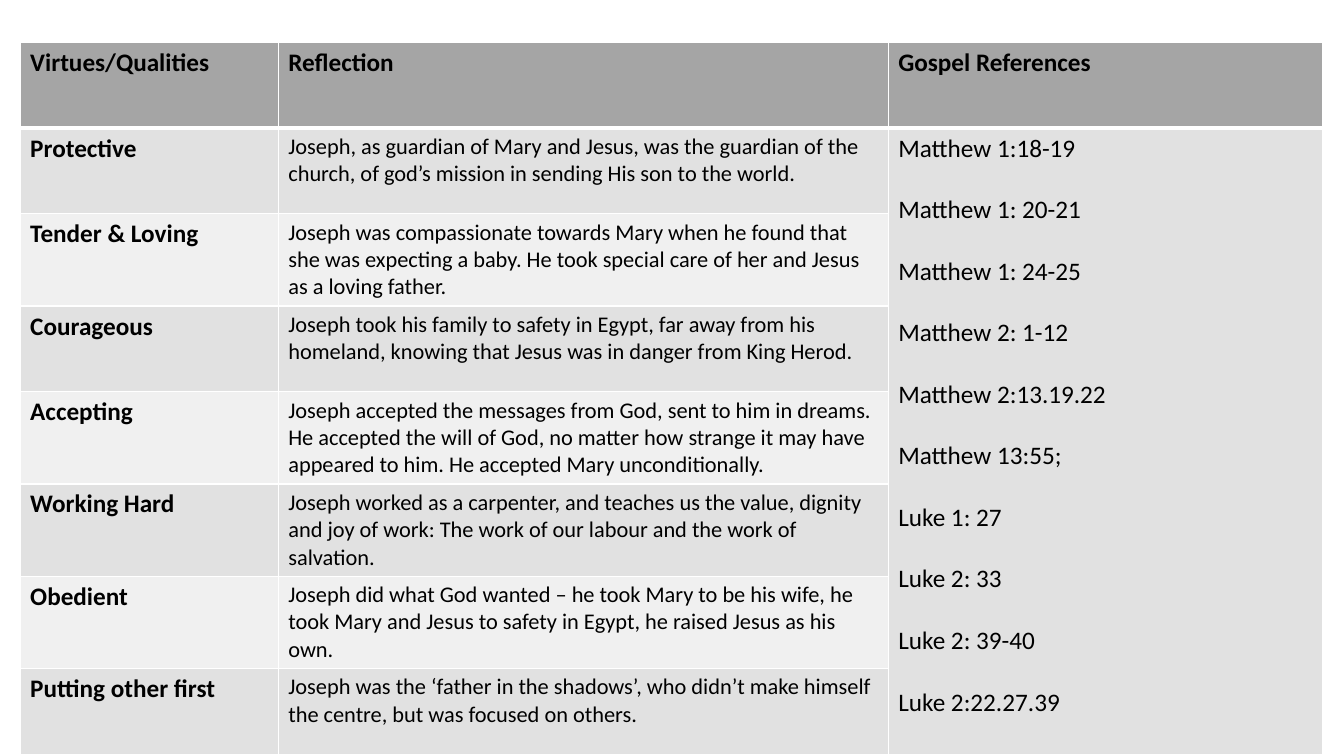
from dataclasses import dataclass

from lxml import etree
from pptx import Presentation
from pptx.dml.color import RGBColor
from pptx.oxml import ns
from pptx.util import Inches, Pt


@dataclass(frozen=True)
class Theme:
    font: str = "Calibri"
    ink: str = "000000"
    rule: str = "FFFFFF"
    header: str = "A5A5A5"
    bands: tuple = ("E1E1E1", "F0F0F0")
    label_size: int = 18
    body_size: int = 16
    reference_gap: int = 22
    thin: int = 1
    thick: int = 3


THEME = Theme()
COLUMN_WIDTHS = (2.56, 6.05, 4.31)
ROW_HEIGHT = 0.85
HEADINGS = ("Virtues/Qualities", "Reflection", "Gospel References")
VIRTUES = (
    ("Protective",
     "Joseph, as guardian of Mary and Jesus, was the guardian of the church, "
     "of god’s mission in sending His son to the world."),
    ("Tender & Loving",
     "Joseph was compassionate towards Mary when he found that she was expecting a baby. "
     "He took special care of her and Jesus as a loving father."),
    ("Courageous",
     "Joseph took his family to safety in Egypt, far away from his homeland, "
     "knowing that Jesus was in danger from King Herod."),
    ("Accepting",
     "Joseph accepted the messages from God, sent to him in dreams. "
     "He accepted the will of God, no matter how strange it may have appeared to him. "
     "He accepted Mary unconditionally."),
    ("Working Hard",
     "Joseph worked as a carpenter, and teaches us the value, dignity and joy of work: "
     "The work of our labour and the work of salvation."),
    ("Obedient",
     "Joseph did what God wanted – he took Mary to be his wife, "
     "he took Mary and Jesus to safety in Egypt, he raised Jesus as his own."),
    ("Putting other first",
     "Joseph was the ‘father in the shadows’, who didn’t make himself the centre, "
     "but was focused on others."),
)
REFERENCES = (
    "Matthew 1:18-19", "Matthew 1: 20-21", "Matthew 1: 24-25", "Matthew 2: 1-12",
    "Matthew 2:13.19.22", "Matthew 13:55;", "Luke 1: 27", "Luke 2: 33",
    "Luke 2: 39-40", "Luke 2:22.27.39",
)


def write_lines(cell, lines, size, bold=False, gap=0):
    frame = cell.text_frame
    for index, line in enumerate(lines):
        paragraph = frame.add_paragraph() if index else frame.paragraphs[0]
        paragraph.space_before = Pt(gap if index else 0)
        run = paragraph.add_run()
        run.text = line
        run.font.name = THEME.font
        run.font.size = Pt(size)
        run.font.bold = bold
        run.font.color.rgb = RGBColor.from_string(THEME.ink)


def style_cell(cell, row):
    widths = {
        "lnL": THEME.thin,
        "lnR": THEME.thin,
        "lnT": THEME.thick if row == 1 else THEME.thin,
        "lnB": THEME.thick if row == 0 else THEME.thin,
    }
    properties = cell._tc.get_or_add_tcPr()
    for side, width in widths.items():
        border = etree.SubElement(properties, ns.qn(f"a:{side}"), w=str(Pt(width)))
        fill = etree.SubElement(border, ns.qn("a:solidFill"))
        etree.SubElement(fill, ns.qn("a:srgbClr"), val=THEME.rule)
    colour = THEME.bands[(row - 1) % 2] if row else THEME.header
    cell.fill.solid()
    cell.fill.fore_color.rgb = RGBColor.from_string(colour)


def add_grid(slide):
    row_count = len(VIRTUES) + 1
    grid = slide.shapes.add_table(
        row_count, len(HEADINGS), Inches(0.2), Inches(0.42),
        Inches(sum(COLUMN_WIDTHS)), Inches(ROW_HEIGHT * row_count)).table
    for column, width in zip(grid.columns, COLUMN_WIDTHS):
        column.width = Inches(width)
    for index, row in enumerate(grid.rows):
        row.height = Inches(ROW_HEIGHT)
        for cell in row.cells:
            style_cell(cell, index)
    return grid


def fill_grid(grid):
    for column, heading in enumerate(HEADINGS):
        write_lines(grid.cell(0, column), [heading], THEME.label_size, bold=True)
    for row, (virtue, reflection) in enumerate(VIRTUES, start=1):
        write_lines(grid.cell(row, 0), [virtue], THEME.label_size, bold=True)
        write_lines(grid.cell(row, 1), [reflection], THEME.body_size)
    references = grid.cell(1, 2)
    references.merge(grid.cell(len(VIRTUES), 2))
    write_lines(references, REFERENCES, THEME.label_size, gap=THEME.reference_gap)


def main():
    deck = Presentation()
    deck.slide_width = Inches(13.33)
    deck.slide_height = Inches(7.5)
    slide = deck.slides.add_slide(deck.slide_layouts[6])
    fill_grid(add_grid(slide))
    deck.save("out.pptx")


if __name__ == "__main__":
    main()
